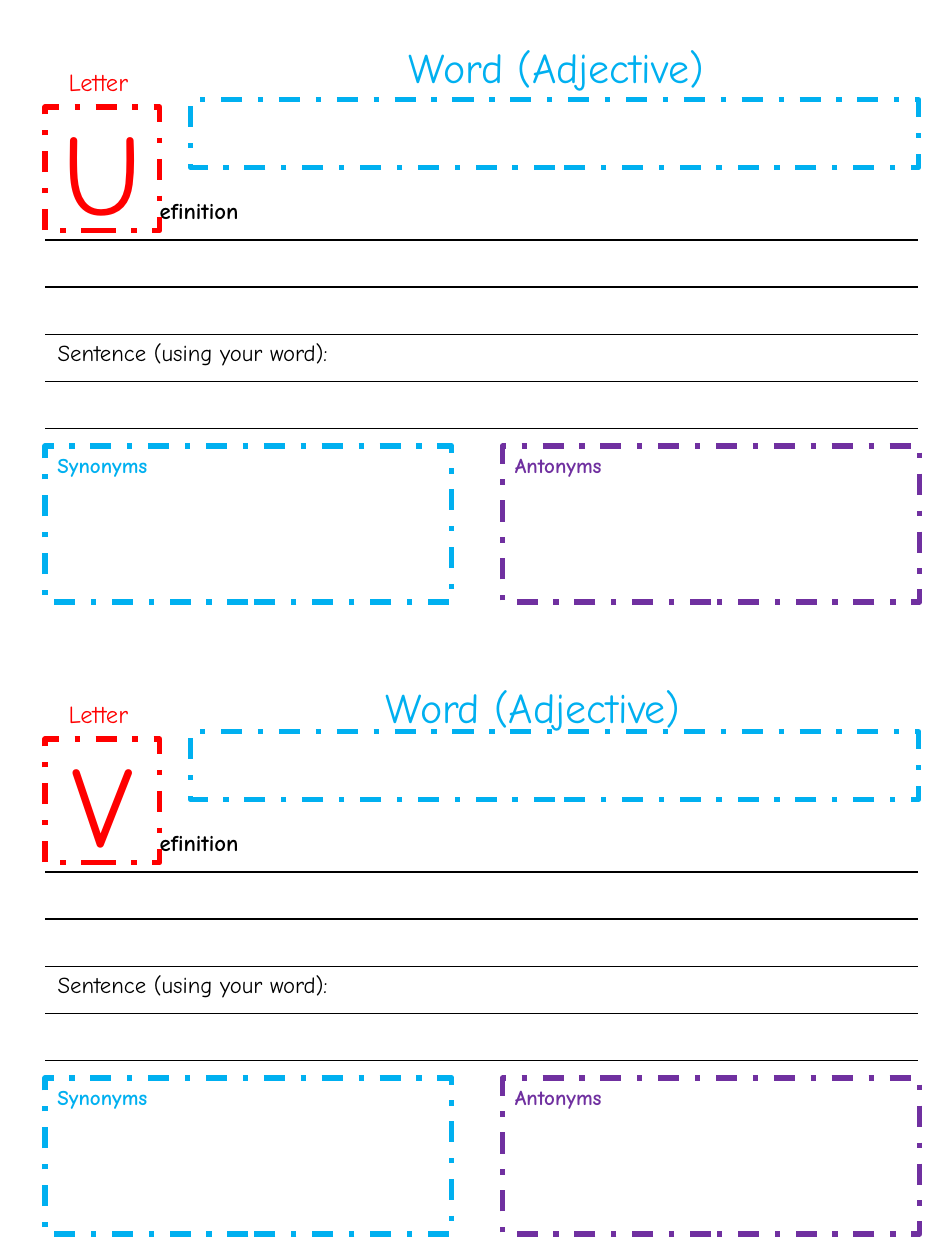
from lxml.etree import SubElement
from pptx import Presentation
from pptx.dml.color import RGBColor
from pptx.enum.dml import MSO_LINE
from pptx.enum.shapes import MSO_SHAPE
from pptx.enum.text import MSO_ANCHOR, MSO_AUTO_SIZE, PP_ALIGN
from pptx.oxml.ns import qn
from pptx.util import Cm, Pt

FONT = "Comic Neue"
RED = RGBColor(0xFF, 0x00, 0x00)
BLUE = RGBColor(0x00, 0xB0, 0xF0)
PURPLE = RGBColor(0x70, 0x30, 0xA0)
BLACK = RGBColor(0x00, 0x00, 0x00)
WHITE = RGBColor(0xFF, 0xFF, 0xFF)

LEFT = 0.91       # left margin, cm
CARD_STEP = 12.74  # distance between the two cards, cm


def write(tf, text, size, color, bold=False, align=PP_ALIGN.LEFT, anchor=MSO_ANCHOR.TOP):
    tf.word_wrap = True
    tf.vertical_anchor = anchor
    p = tf.paragraphs[0]
    p.alignment = align
    r = p.add_run()
    r.text = text
    r.font.name = FONT
    r.font.size = Pt(size)
    r.font.bold = bold
    r.font.color.rgb = color
    return p


def dashed_box(x, y, w, h, color):
    sp = s.shapes.add_shape(MSO_SHAPE.RECTANGLE, Cm(x), Cm(y), Cm(w), Cm(h))
    sp.shadow.inherit = False
    sp.fill.background()
    sp.line.color.rgb = color
    sp.line.width = Pt(3)
    sp.line.dash_style = MSO_LINE.DASH_DOT
    return sp


prs = Presentation()
prs.slide_width, prs.slide_height = Cm(19.05), Cm(25.4)
s = prs.slides.add_slide(prs.slide_layouts[5])

# Letter, heading left, top and width of each card
cards = [("U", 7.14, 0.71, 8.15), ("V", 5.92, 13.61, 9.93)]

for i, (letter, head_x, head_y, head_w) in enumerate(cards):
    top = i * CARD_STEP

    # Writing lines: a table with only horizontal rules
    frame = s.shapes.add_table(5, 2, Cm(LEFT), Cm(top + 3.89), Cm(17.6), Cm(4.75))
    table = frame.table
    table.first_row = table.horz_banding = False
    for n, row in enumerate(table.rows):
        for cell in row.cells:
            tcPr = cell._tc.get_or_add_tcPr()
            for side in ("lnL", "lnR", "lnT", "lnB"):
                ln = SubElement(tcPr, qn("a:" + side), w=str(Pt(1)))
                if side == "lnB" or (side == "lnT" and n > 0):
                    fill = SubElement(ln, qn("a:solidFill"))
                    SubElement(fill, qn("a:srgbClr"), val=str(BLACK))
                else:
                    SubElement(ln, qn("a:noFill"))
            cell.fill.solid()
            cell.fill.fore_color.rgb = WHITE
            # Small empty cells keep the row height
            SubElement(cell.text_frame.paragraphs[0]._p, qn("a:endParaRPr"), sz="1300")
    p = write(table.cell(0, 0).text_frame, "Definition", 13, BLACK, bold=True)
    p._p.get_or_add_pPr().set("marL", str(Cm(1.77)))
    write(table.cell(3, 0).text_frame, "Sentence (using your word):", 13, BLACK)

    # Letter box and its label
    sp = dashed_box(LEFT, top + 2.16, 2.31, 2.49, RED)
    sp.fill.solid()
    sp.fill.fore_color.rgb = WHITE
    write(sp.text_frame, letter, 66, RED, align=PP_ALIGN.CENTER, anchor=MSO_ANCHOR.MIDDLE)
    label = s.shapes.add_textbox(Cm(LEFT), Cm(top + 1.22), Cm(2.31), Cm(0.86))
    write(label.text_frame, "Letter ", 14, RED, align=PP_ALIGN.CENTER)

    # Word box and its heading; the first heading is the slide title
    dashed_box(3.84, top + 2.01, 14.68, 1.37, BLUE)
    head = s.shapes.title if i == 0 else s.shapes.add_textbox(0, 0, 0, 0)
    head.left, head.top, head.width, head.height = Cm(head_x), Cm(head_y), Cm(head_w), Cm(1.27)
    head.text_frame.auto_size = MSO_AUTO_SIZE.NONE
    text = "Word (Adjective)" if i == 0 else "Word (Adjective) "
    write(head.text_frame, text, 24, BLUE, align=PP_ALIGN.CENTER)

    # Synonyms and antonyms
    for x, w, text, color in [(LEFT, 8.2, "Synonyms", BLUE), (10.13, 8.41, "Antonyms", PURPLE)]:
        sp = dashed_box(x, top + 8.99, w, 3.15, color)
        write(sp.text_frame, text, 12, color, bold=True)

prs.save("out.pptx")
